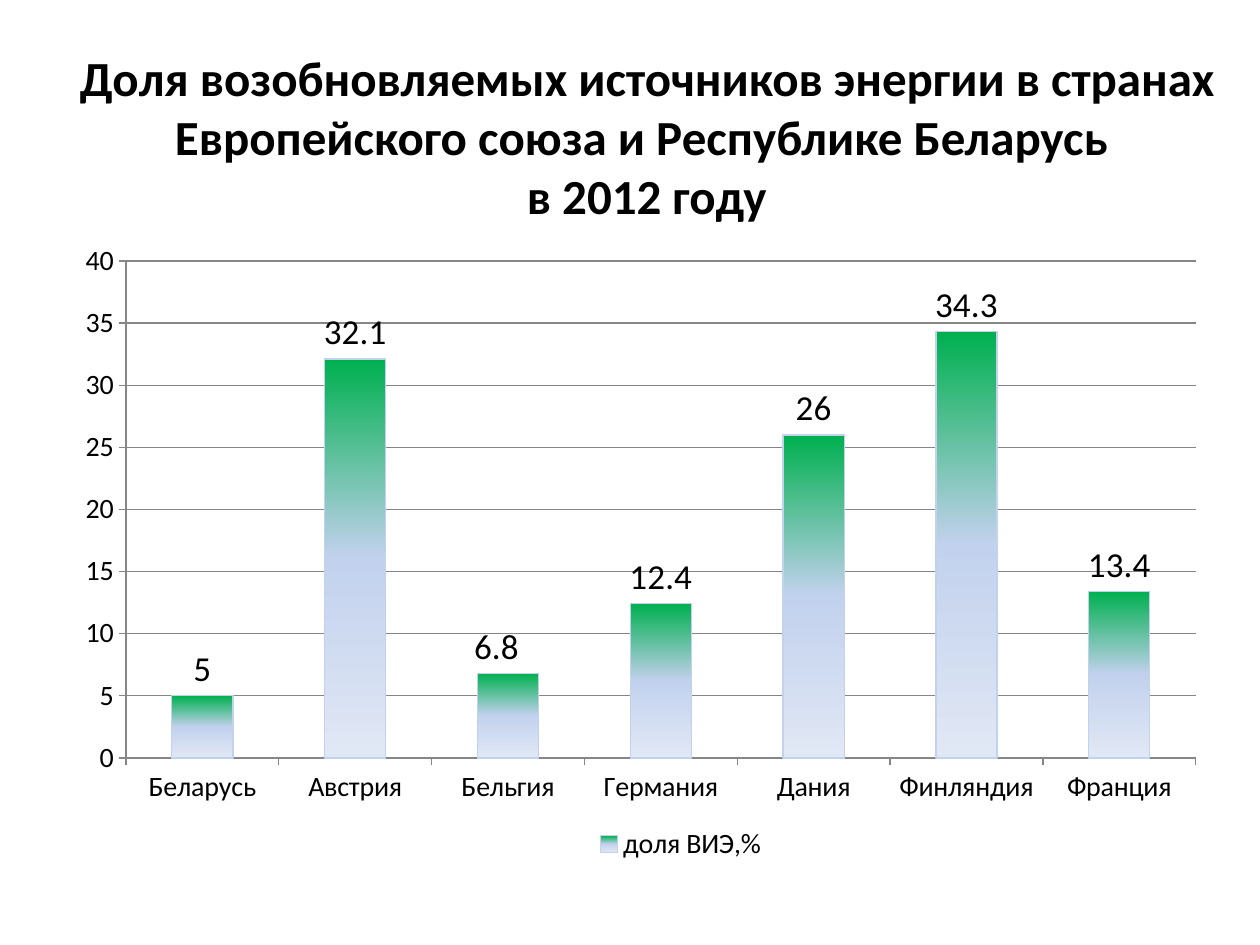
from dataclasses import dataclass

from pptx import Presentation
from pptx.chart.data import CategoryChartData
from pptx.dml.color import RGBColor
from pptx.enum.chart import XL_CHART_TYPE, XL_LABEL_POSITION, XL_LEGEND_POSITION, XL_TICK_MARK
from pptx.enum.text import MSO_ANCHOR, PP_ALIGN
from pptx.oxml import parse_xml
from pptx.oxml.ns import nsdecls
from pptx.util import Cm, Pt

FONT = "Calibri"
BLACK, GRID, BAR_EDGE = "000000", "868686", "C2D1ED"
BAR_STOPS = ((0, "00B050"), (50, BAR_EDGE), (100, "E1E8F5"))


@dataclass
class Box:
    left: float
    top: float
    width: float
    height: float

    def lengths(self) -> tuple:
        return tuple(Cm(value) for value in (self.left, self.top, self.width, self.height))


@dataclass
class Country:
    name: str
    share: float


COUNTRIES = [
    Country("Беларусь", 5),
    Country("Австрия", 32.1),
    Country("Бельгия", 6.8),
    Country("Германия", 12.4),
    Country("Дания", 26),
    Country("Финляндия", 34.3),
    Country("Франция", 13.4),
]


def color(value: str) -> RGBColor:
    return RGBColor.from_string(value)


def format_font(font, size: float, bold: bool = False, fill: str = BLACK) -> None:
    font.name, font.size, font.bold = FONT, Pt(size), bold
    font.color.rgb = color(fill)


def add_text(slide, text: str, box: Box, *, size: float, bold: bool = False, fill: str = BLACK,
             align=PP_ALIGN.CENTER, anchor=MSO_ANCHOR.MIDDLE) -> None:
    frame = slide.shapes.add_textbox(*box.lengths()).text_frame
    frame.word_wrap, frame.vertical_anchor = True, anchor
    paragraph = frame.paragraphs[0]
    paragraph.text, paragraph.alignment = text, align
    for run in paragraph.runs:
        format_font(run.font, size, bold, fill)


def manual_layout(**settings):
    items = "".join(f'<c:{key} val="{value}"/>' for key, value in settings.items())
    return parse_xml(f'<c:layout {nsdecls("c")}><c:manualLayout>{items}</c:manualLayout></c:layout>')


def place_layout(parent, layout, after: str | None = None) -> None:
    for old in parent.findall(layout.tag):
        parent.remove(old)
    position = 0 if after is None else parent.index(parent.find(layout.tag.replace("layout", after))) + 1
    parent.insert(position, layout)


def format_line(line, value: str) -> None:
    line.color.rgb, line.width = color(value), Pt(0.75)


def fill_gradient(fill_format, properties, stops) -> None:
    fill_format.gradient()
    old = properties.find(".//{*}gradFill")
    items = "".join(f'<a:gs pos="{position * 1000}"><a:srgbClr val="{value}"/></a:gs>'
                    for position, value in stops)
    gradient = parse_xml(f'<a:gradFill {nsdecls("a")} rotWithShape="1"><a:gsLst>{items}</a:gsLst>'
                         '<a:lin ang="5400000" scaled="0"/></a:gradFill>')
    old.getparent().replace(old, gradient)


def format_axis(axis) -> None:
    axis.major_tick_mark, axis.minor_tick_mark = XL_TICK_MARK.OUTSIDE, XL_TICK_MARK.NONE
    format_font(axis.tick_labels.font, 16)
    format_line(axis.format.line, GRID)


def add_share_chart(slide, countries: list[Country], box: Box) -> None:
    data = CategoryChartData()
    data.categories = [country.name for country in countries]
    data.add_series("доля ВИЭ,%", [country.share for country in countries])
    chart = slide.shapes.add_chart(XL_CHART_TYPE.COLUMN_CLUSTERED, *box.lengths(), data).chart
    chart.has_title = False
    format_font(chart.font, 10)

    format_axis(chart.category_axis)
    format_axis(chart.value_axis)
    chart.value_axis.minimum_scale, chart.value_axis.maximum_scale = 0, 40
    chart.value_axis.major_unit = 5
    chart.value_axis.has_major_gridlines = True
    format_line(chart.value_axis.major_gridlines.format.line, GRID)

    plot = chart.plots[0]
    plot.gap_width, plot.vary_by_categories = 150, False
    series = plot.series[0]
    fill_gradient(series.format.fill, series.format.fill._xPr, BAR_STOPS)
    format_line(series.format.line, BAR_EDGE)

    labels = series.data_labels
    labels.show_value, labels.position = True, XL_LABEL_POSITION.OUTSIDE_END
    format_font(labels.font, 20)
    belgium_label = series.points[2].data_label
    belgium_label.position = XL_LABEL_POSITION.OUTSIDE_END
    format_font(belgium_label.font, 20)
    place_layout(labels._element.find("{*}dLbl"), manual_layout(x=-0.01, y=0), after="idx")

    chart.has_legend = True
    legend = chart.legend
    legend.position, legend.include_in_layout = XL_LEGEND_POSITION.RIGHT, False
    format_font(legend.font, 16)
    place_layout(legend._element, manual_layout(xMode="edge", yMode="edge", x=0.44, y=0.92, w=0.2, h=0.07),
                 after="legendPos")
    place_layout(plot._element.getparent(), manual_layout(
        layoutTarget="inner", xMode="edge", yMode="edge", x=0.062, y=0.042, w=0.922, h=0.778))


def main() -> None:
    """Build the slide on renewable energy shares."""
    presentation = Presentation()
    presentation.slide_width, presentation.slide_height = Cm(25.4), Cm(19.05)
    slide = presentation.slides.add_slide(presentation.slide_layouts[6])
    add_text(slide, "Доля возобновляемых источников энергии в странах Европейского союза "
                    "и Республике Беларусь \vв 2012 году",
             Box(1.09, 1.73, 23.9, 2.01), size=28, bold=True)
    add_share_chart(slide, COUNTRIES, Box(1.09, 4.72, 23.39, 12.88))
    presentation.save("out.pptx")


if __name__ == "__main__":
    main()
